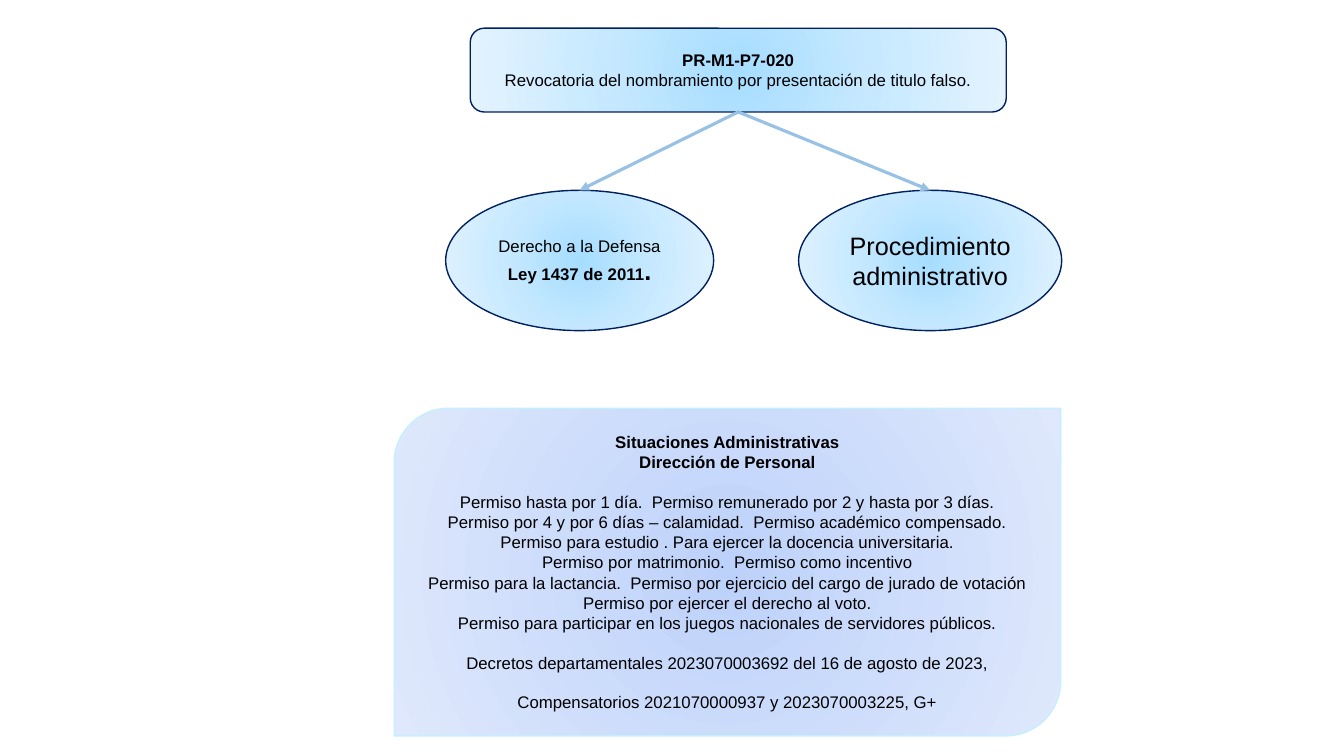
import pptx
import pptx.dml.color
import pptx.enum.shapes
import pptx.enum.text
import pptx.oxml
import pptx.oxml.ns
import pptx.util
from lxml import etree

RGBColor = pptx.dml.color.RGBColor
MSO_SHAPE = pptx.enum.shapes.MSO_SHAPE
qn = pptx.oxml.ns.qn

BLACK = RGBColor(0x00, 0x00, 0x00)
NAVY = RGBColor(0x00, 0x20, 0x60)
PALE_CYAN = RGBColor(0xC4, 0xEF, 0xFF)
ARROW_BLUE = RGBColor(0x97, 0xC1, 0xE5)
SKY_STOPS = ((0, RGBColor(0xA6, 0xDD, 0xFF)), (50, RGBColor(0xC7, 0xE9, 0xFF)),
             (100, RGBColor(0xE3, 0xF3, 0xFF)))
PERIWINKLE_STOPS = ((0, RGBColor(0xBD, 0xD2, 0xFA)), (100, RGBColor(0xDF, 0xE8, 0xFC)))

FONT = "Arial"
BODY_SIZE = 12
LARGE_SIZE = 18
LINE_GAP = 14

# Regions in inches: left, top, width, height
FLOW_BOX = (4.42, 0.28, 6.11, 3)
PERMITS_BOX = (3.91, 4.05, 6.61, 3.25)

# Each line: text, bold, starts a new group
PERMIT_LINES = (
    ("Situaciones Administrativas", True, False),
    ("Dirección de Personal", True, False),
    ("Permiso hasta por 1 día.  Permiso remunerado por 2 y hasta por 3 días.", False, True),
    ("Permiso por 4 y por 6 días – calamidad.  Permiso académico compensado.", False, False),
    ("Permiso para estudio . Para ejercer la docencia universitaria.", False, False),
    ("Permiso por matrimonio.  Permiso como incentivo", False, False),
    ("Permiso para la lactancia.  Permiso por ejercicio del cargo de jurado de votación",
     False, False),
    ("Permiso por ejercer el derecho al voto.", False, False),
    ("Permiso para participar en los juegos nacionales de servidores públicos.", False, False),
    ("Decretos departamentales 2023070003692 del 16 de agosto de 2023,", False, True),
    ("Compensatorios 2021070000937 y 2023070003225, G+", False, True),
)


def inside(box, left, top, width, height):
    """Part of a box, given in percent of its width and height."""
    return (box[0] + box[2] * left / 100, box[1] + box[3] * top / 100,
            box[2] * width / 100, box[3] * height / 100)


def fill_from_centre(shape, stops):
    shape.fill.gradient()
    gradient = shape._element.spPr.find(qn("a:gradFill"))
    for child in list(gradient):
        gradient.remove(child)
    stop_list = etree.SubElement(gradient, qn("a:gsLst"))
    for position, color in stops:
        stop = etree.SubElement(stop_list, qn("a:gs"), pos=str(position * 1000))
        etree.SubElement(stop, qn("a:srgbClr"), val=str(color))
    circle = etree.SubElement(gradient, qn("a:path"), attrib={"path": "circle"})
    etree.SubElement(circle, qn("a:fillToRect"), l="50000", t="50000", r="50000", b="50000")


def add_node(slide, kind, box, stops, line_color, lines):
    shape = slide.shapes.add_shape(kind, *map(pptx.util.Inches, box))
    shape.shadow.inherit = False
    fill_from_centre(shape, stops)
    shape.line.color.rgb = line_color
    shape.line.width = pptx.util.Pt(1)
    frame = shape.text_frame
    frame.word_wrap = True
    frame.vertical_anchor = pptx.enum.text.MSO_ANCHOR.MIDDLE
    frame.text = "\n".join(text for text, bold, new_group in lines)
    for paragraph, (text, bold, new_group) in zip(frame.paragraphs, lines):
        paragraph.alignment = pptx.enum.text.PP_ALIGN.CENTER
        if new_group:
            paragraph.space_before = pptx.util.Pt(LINE_GAP)
        format_run(paragraph.runs[0], BODY_SIZE, bold)
    return shape


def format_run(run, size, bold):
    run.font.name = FONT
    run.font.size = pptx.util.Pt(size)
    run.font.bold = bold
    run.font.color.rgb = BLACK


def add_arrow(slide, source, target):
    arrow = slide.shapes.add_connector(pptx.enum.shapes.MSO_CONNECTOR.STRAIGHT, 0, 0, 0, 0)
    arrow.begin_connect(source, 2)
    arrow.end_connect(target, 0)
    arrow.line.color.rgb = ARROW_BLUE
    arrow.line.width = pptx.util.Pt(2.25)
    etree.SubElement(arrow.line._get_or_add_ln(), qn("a:tailEnd"), type="triangle")
    etree.SubElement(arrow._element.spPr, qn("a:effectLst"))


def add_flow(slide, box):
    procedure = add_node(
        slide, MSO_SHAPE.ROUNDED_RECTANGLE, inside(box, 4, 0, 87, 27.7), SKY_STOPS, NAVY,
        (("PR-M1-P7-020", True, False),
         ("Revocatoria del nombramiento por presentación de titulo falso.", False, False)))
    defence = add_node(
        slide, MSO_SHAPE.OVAL, inside(box, 0, 53.6, 43.5, 46.4), SKY_STOPS, NAVY,
        (("Derecho a la Defensa", False, False), ("Ley 1437 de 2011", True, False)))
    full_stop = defence.text_frame.paragraphs[1].add_run()
    full_stop.text = "."
    format_run(full_stop, LARGE_SIZE, True)
    administrative = add_node(
        slide, MSO_SHAPE.OVAL, inside(box, 57.3, 53.6, 42.7, 46.4), SKY_STOPS, NAVY,
        (("Procedimiento administrativo", False, False),))
    format_run(administrative.text_frame.paragraphs[0].runs[0], LARGE_SIZE, False)
    for target in (defence, administrative):
        add_arrow(slide, procedure, target)


def add_permits(slide, box):
    add_node(slide, MSO_SHAPE.ROUND_2_DIAG_RECTANGLE, box, PERIWINKLE_STOPS, PALE_CYAN,
             PERMIT_LINES)


def main():
    presentation = pptx.Presentation()
    presentation.slide_width = pptx.util.Inches(13.33)
    presentation.slide_height = pptx.util.Inches(7.5)
    slide = presentation.slides.add_slide(presentation.slide_layouts[6])
    add_flow(slide, FLOW_BOX)
    add_permits(slide, PERMITS_BOX)
    presentation.save("out.pptx")


if __name__ == "__main__":
    main()
